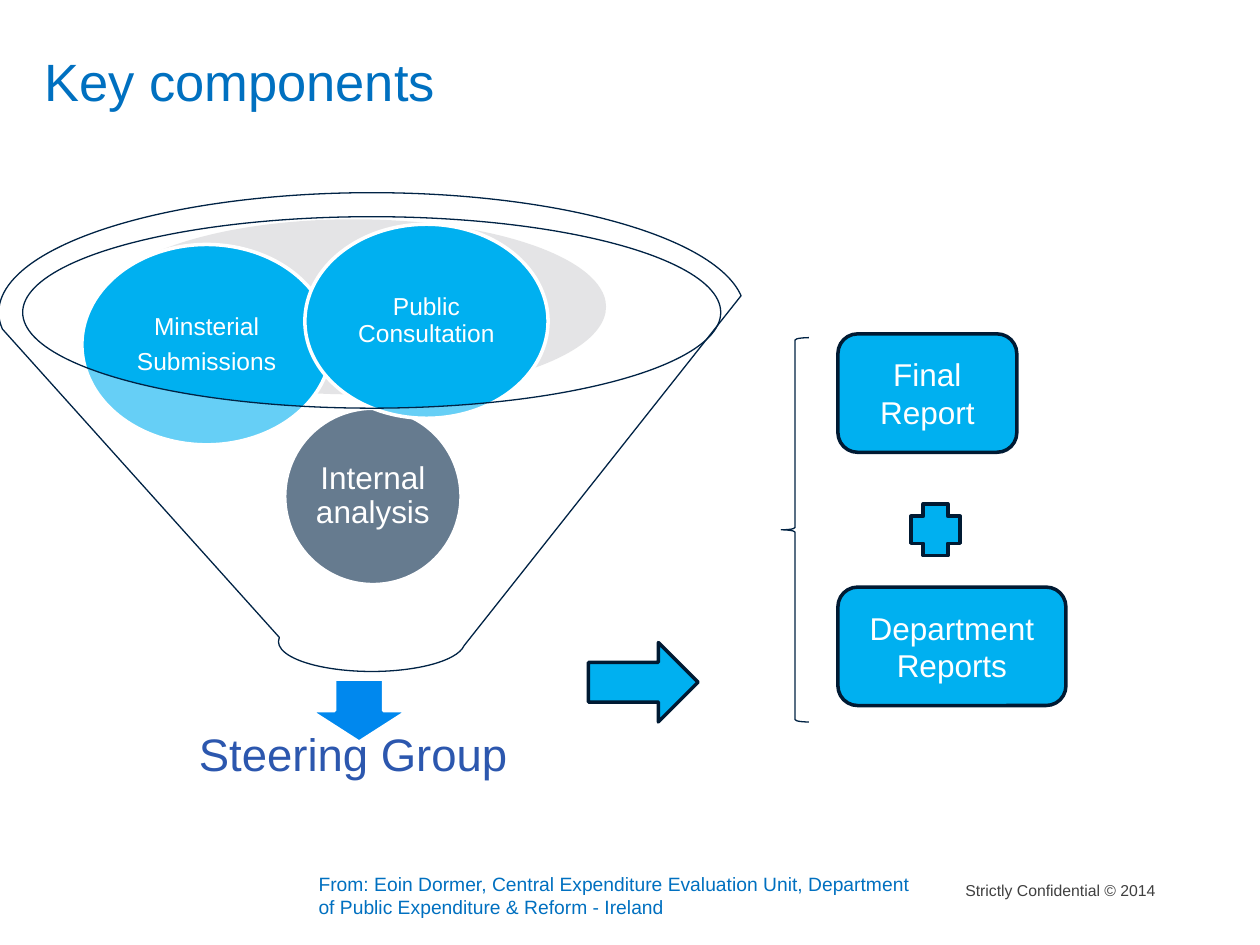
from lxml import etree
from pptx import Presentation
from pptx.dml.color import RGBColor
from pptx.enum.shapes import MSO_SHAPE
from pptx.enum.text import MSO_ANCHOR, PP_ALIGN
from pptx.oxml.ns import qn
from pptx.util import Emu, Pt

ELLIPSE, FUNNEL = MSO_SHAPE.OVAL, MSO_SHAPE.FUNNEL
DOWN_ARROW, RIGHT_ARROW = MSO_SHAPE.DOWN_ARROW, MSO_SHAPE.RIGHT_ARROW
ROUND_RECT, PLUS, BRACE = MSO_SHAPE.ROUNDED_RECTANGLE, MSO_SHAPE.CROSS, MSO_SHAPE.LEFT_BRACE
TOP, MIDDLE, BOTTOM = MSO_ANCHOR.TOP, MSO_ANCHOR.MIDDLE, MSO_ANCHOR.BOTTOM
LEFT, CENTER, RIGHT = PP_ALIGN.LEFT, PP_ALIGN.CENTER, PP_ALIGN.RIGHT

PX = 9144  # 100 px to the inch
FONT = "Arial"
WHITE, SKY, NAVY, BLUE = "FFFFFF", "00B0F0", "001A33", "0070C0"
FUNNEL_TEXT = {"line_spacing": 0.9}


def color(code):
    return RGBColor.from_string(code)


def px(value):
    return Emu(value * PX)


def within(box, left, top, width, height):
    """Turn a place relative to a box into a place on the slide."""
    return box[0] + left, box[1] + top, width, height


def write(shape, lines, size, ink, align=CENTER, anchor=MIDDLE,
          insets=(10, 5, 10, 5), spacing=None, after=0):
    frame = shape.text_frame
    frame.word_wrap = True
    frame.vertical_anchor = anchor
    sides = ("margin_left", "margin_top", "margin_right", "margin_bottom")
    for side, inset in zip(sides, insets):
        setattr(frame, side, px(inset))
    for index, line in enumerate(lines):
        para = frame.add_paragraph() if index else frame.paragraphs[0]
        para.alignment = align
        for name, value in (spacing or {}).items():
            setattr(para, name, value)
        if after:
            para.space_after = Pt(round(size * after, 1))
        span = para.add_run()
        span.text = line
        for name, value in {"name": FONT, "size": Pt(size)}.items():
            setattr(span.font, name, value)
        span.font.color.rgb = color(ink)


def add_text(page, place, lines, size, ink, **layout):
    box = page.shapes.add_textbox(*map(px, place))
    write(box, lines, size, ink, **layout)


def add_figure(page, kind, place, fill=None, line=None, width=2, opacity=100):
    shape = page.shapes.add_shape(kind, *map(px, place))
    shape.shadow.inherit = False
    if fill:
        shape.fill.solid()
        shape.fill.fore_color.rgb = color(fill)
        if opacity < 100:
            tint = shape.element.spPr.find(qn("a:solidFill"))[0]
            etree.SubElement(tint, qn("a:alpha")).set("val", str(opacity * 1000))
    else:
        shape.fill.background()
    if line:
        shape.line.color.rgb = color(line)
        shape.line.width = Pt(width)
    else:
        shape.line.fill.background()
    return shape


def draw_title(page, box):
    title = page.shapes.title
    for name, value in zip(("left", "top", "width", "height"), box):
        setattr(title, name, px(value))
    write(title, ["Key components"], 30, BLUE, align=LEFT, anchor=BOTTOM, insets=(0, 0, 0, 2))


def draw_funnel(page, box):
    """Inputs falling through a funnel towards the steering group."""
    add_figure(page, ELLIPSE, within(box, 81, 21, 401, 139), "BDBDC1", opacity=40)
    add_figure(page, DOWN_ARROW, within(box, 247, 386, 78, 50), "0088EE", WHITE)
    add_text(page, within(box, 95, 401, 373, 93), ["Steering Group"], 26, "2C57AE",
             insets=(20,) * 4, spacing=FUNNEL_TEXT, after=0.35)
    balls = (
        ((227, 171, 140, 140), "002345", ["Internal analysis"], 18),
        ((66, 41, 198, 159), SKY, ["Minsterial", "Submissions"], 14),
        ((243, 25, 193, 154), SKY, ["Public Consultation"], 14),
    )
    for place, fill, lines, size in balls:
        ball = add_figure(page, ELLIPSE, within(box, *place), fill, WHITE)
        write(ball, lines, size, WHITE, insets=(2,) * 4, spacing=FUNNEL_TEXT, after=0.35)
    add_figure(page, FUNNEL, within(box, 0, 0, 592, 380), WHITE, "002345", 0.75, opacity=40)


def draw_outputs(page, box):
    """The arrow, and the reports grouped by a brace."""
    add_figure(page, RIGHT_ARROW, within(box, 0, 245, 87, 63), SKY, NAVY)
    add_figure(page, BRACE, within(box, 153, 3, 22, 305), line="002243", width=0.75)
    add_figure(page, PLUS, within(box, 256, 135, 39, 41), SKY, NAVY)
    for label, top, width in (("Final Report", 0, 142), ("Department Reports", 201, 181)):
        report = add_figure(page, ROUND_RECT, within(box, 198, top, width, 94), SKY, NAVY)
        write(report, [label], 18, WHITE)


def draw_footer(page, box):
    source = ("From: Eoin Dormer, Central Expenditure Evaluation Unit, "
              "Department of Public Expenditure & Reform - Ireland")
    add_text(page, within(box, 0, 0, 500, 47), [source], 11, BLUE, align=LEFT, anchor=TOP)
    add_text(page, within(box, 516, 8, 158, 24), ["Strictly Confidential © 2014"], 9, "404040",
             align=RIGHT, anchor=TOP, insets=(0, 4, 0, 0))


def main():
    deck = Presentation()
    deck.slide_width, deck.slide_height = px(1000), px(750)
    page = deck.slides.add_slide(deck.slide_layouts[5])
    draw_title(page, (35, 28, 929, 63))
    draw_funnel(page, (-1, 153, 592, 494))
    draw_outputs(page, (467, 265, 379, 308))
    draw_footer(page, (243, 687, 674, 47))
    deck.save("out.pptx")


if __name__ == "__main__":
    main()
